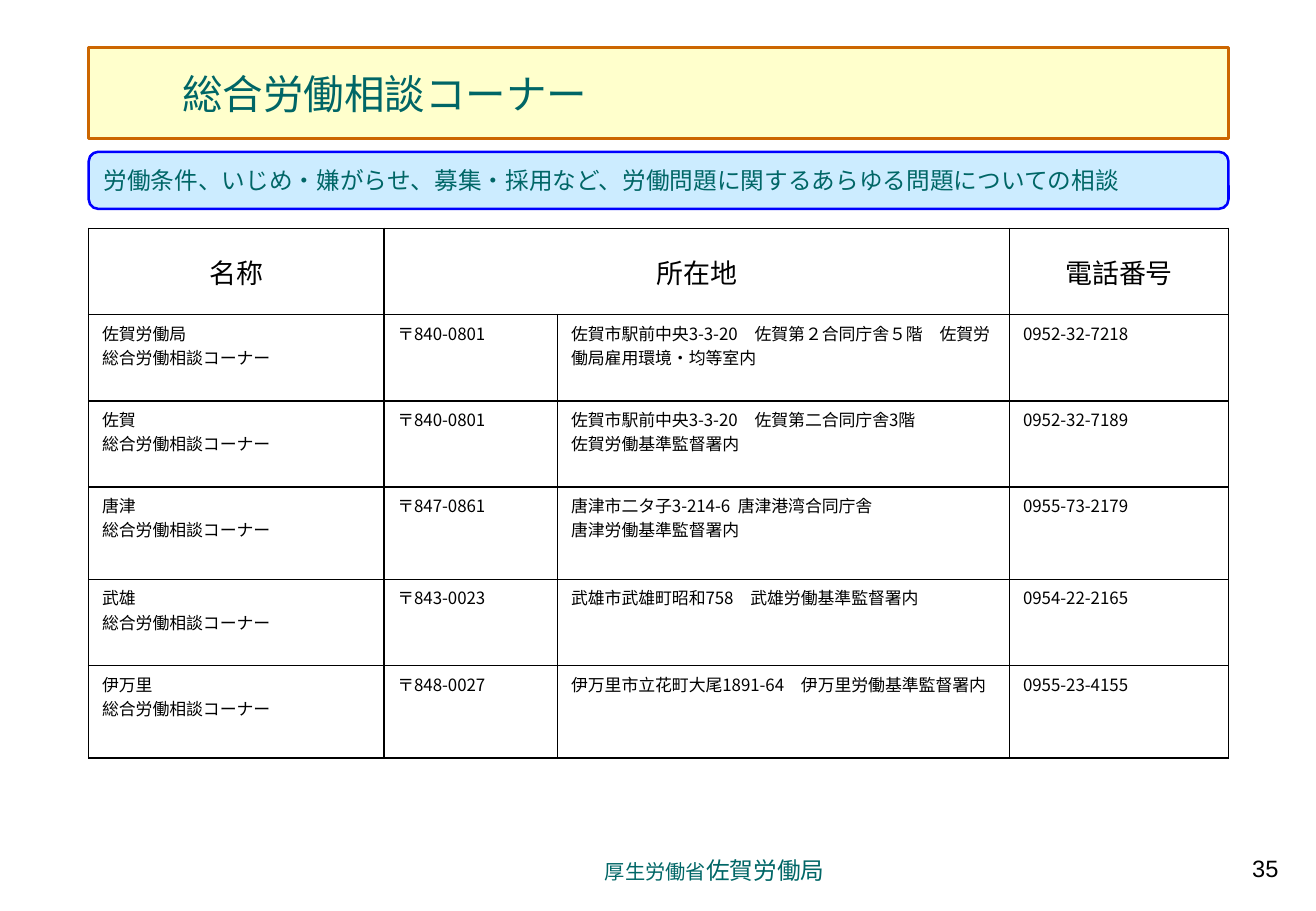
from typing import NamedTuple

from lxml import etree
from pptx import Presentation
from pptx.dml.color import RGBColor
from pptx.enum.shapes import MSO_SHAPE
from pptx.enum.text import MSO_ANCHOR, MSO_AUTO_SIZE, PP_ALIGN
from pptx.oxml.ns import qn
from pptx.util import Inches, Pt

ROUND = MSO_SHAPE.ROUNDED_RECTANGLE
MIDDLE, TOP = MSO_ANCHOR.MIDDLE, MSO_ANCHOR.TOP
LEFT, CENTER, RIGHT = PP_ALIGN.LEFT, PP_ALIGN.CENTER, PP_ALIGN.RIGHT
FIXED = MSO_AUTO_SIZE.NONE

GOTHIC, SERIF, SANS = "Noto Sans CJK JP", "TeX Gyre Pagella", "Arial"
TEAL, BLACK, WHITE = "006666", "000000", "FFFFFF"
EDGE, WIDTH = 0.73, 9.38


class Office(NamedTuple):
    name: str
    post: str
    place: str
    phone: str


class Panel(NamedTuple):
    top: float
    height: float
    fill: str
    line: str
    size: int
    text: str


HEADS = {0: "名称", 1: "所在地", 3: "電話番号"}
DESK = "総合労働相談コーナー"
COLS = [2.43, 1.43, 3.72, 1.8]
ROWS = [0.71, 0.71, 0.71, 0.76, 0.71, 0.76]
OFFICES = [
    Office("佐賀労働局", "〒840-0801",
           "佐賀市駅前中央3-3-20　佐賀第２合同庁舎５階　佐賀労働局雇用環境・均等室内",
           "0952-32-7218"),
    Office("佐賀", "〒840-0801",
           "佐賀市駅前中央3-3-20　佐賀第二合同庁舎3階\n佐賀労働基準監督署内",
           "0952-32-7189"),
    Office("唐津", "〒847-0861",
           "唐津市二タ子3-214-6  唐津港湾合同庁舎\n唐津労働基準監督署内",
           "0955-73-2179"),
    Office("武雄", "〒843-0023", "武雄市武雄町昭和758　武雄労働基準監督署内",
           "0954-22-2165"),
    Office("伊万里", "〒848-0027",
           "伊万里市立花町大尾1891-64　伊万里労働基準監督署内",
           "0955-23-4155"),
]
TITLE = Panel(0.39, 0.75, "FFFFCC", "CC6600", 24, DESK)
TOPIC = Panel(1.25, 0.47, "CCECFF", "0000FF", 14,
              "労働条件、いじめ・嫌がらせ、募集・採用など、"
              "労働問題に関するあらゆる問題についての相談")


def paint(fill, color: str) -> None:
    fill.solid()
    fill.fore_color.rgb = RGBColor.from_string(color)


def style(run, size: int, color: str, face: str = GOTHIC) -> None:
    run.font.size = Pt(size)
    run.font.name = face
    run.font.color.rgb = RGBColor.from_string(color)
    if face != SANS:
        east = etree.SubElement(run.font._element, qn("a:ea"))
        east.set("typeface", GOTHIC)


def write(frame, text: str, size: int, color: str, align=LEFT,
          face: str = GOTHIC) -> None:
    frame.text = text
    for para in frame.paragraphs:
        para.alignment = align
        for run in para.runs:
            style(run, size, color, face)


def dress(shape, panel: Panel) -> None:
    paint(shape.fill, panel.fill)
    paint(shape.line.fill, panel.line)
    shape.line.width = Pt(1.5)
    frame = shape.text_frame
    frame.auto_size = FIXED
    frame.word_wrap = False
    frame.vertical_anchor = MIDDLE
    write(frame, panel.text, panel.size, TEAL)


def border(cell) -> None:
    props = cell._tc.get_or_add_tcPr()
    for side in ("lnL", "lnR", "lnT", "lnB"):
        line = etree.SubElement(props, qn(f"a:{side}"), w=str(Pt(1)))
        solid = etree.SubElement(line, qn("a:solidFill"))
        etree.SubElement(solid, qn("a:srgbClr"), val=BLACK)


def add_title(slide) -> None:
    title = slide.shapes.title
    title.left, title.top = Inches(EDGE), Inches(TITLE.top)
    title.width, title.height = Inches(WIDTH), Inches(TITLE.height)
    # Rounded outline and left indent
    geom = etree.SubElement(title._element.spPr, qn("a:prstGeom"),
                            prst="roundRect")
    etree.SubElement(geom, qn("a:avLst"))
    dress(title, TITLE)
    props = title.text_frame.paragraphs[0]._p.get_or_add_pPr()
    props.set("marL", str(Inches(0.67)))


def add_topic(slide) -> None:
    shape = slide.shapes.add_shape(ROUND, Inches(EDGE), Inches(TOPIC.top),
                                   Inches(WIDTH), Inches(TOPIC.height))
    shape.shadow.inherit = False
    dress(shape, TOPIC)


def add_list(slide) -> None:
    table = slide.shapes.add_table(
        len(ROWS), len(COLS), Inches(EDGE), Inches(1.88),
        Inches(WIDTH), Inches(sum(ROWS))).table
    table.first_row = table.horz_banding = False
    for col, width in zip(table.columns, COLS):
        col.width = Inches(width)
    for row, height in zip(table.rows, ROWS):
        row.height = Inches(height)
    for cell in table.iter_cells():
        border(cell)
        paint(cell.fill, WHITE)
        cell.margin_left = cell.margin_right = Inches(0.11)
        cell.margin_top = cell.margin_bottom = Inches(0.05)
        cell.vertical_anchor = TOP
    # Header row
    table.cell(0, 1).merge(table.cell(0, 2))
    for col, head in HEADS.items():
        cell = table.cell(0, col)
        cell.vertical_anchor = MIDDLE
        write(cell.text_frame, head, 16, BLACK, CENTER)
    # One row per office
    for row, office in enumerate(OFFICES, 1):
        texts = (f"{office.name}\n{DESK}", *office[1:])
        for col, text in enumerate(texts):
            write(table.cell(row, col).text_frame, text, 10, BLACK)


def add_box(slide, left: float, top: float, width: float, height: float):
    box = slide.shapes.add_textbox(Inches(left), Inches(top),
                                   Inches(width), Inches(height))
    box.text_frame.word_wrap = True
    return box.text_frame


def add_foot(slide) -> None:
    para = add_box(slide, 4.88, 7, 2.44, 0.33).paragraphs[0]
    for text, size in (("厚生労働省", 12), ("佐賀労働局", 14)):
        run = para.add_run()
        run.text = text
        style(run, size, TEAL, SERIF)
    page = add_box(slide, 8.49, 6.98, 2.13, 0.35)
    write(page, "35", 14, BLACK, RIGHT, SANS)


def main() -> None:
    deck = Presentation()
    deck.slide_width, deck.slide_height = Inches(10.83), Inches(7.5)
    slide = deck.slides.add_slide(deck.slide_layouts[5])
    paint(slide.background.fill, WHITE)
    add_title(slide)
    add_topic(slide)
    add_list(slide)
    add_foot(slide)
    deck.save("out.pptx")


if __name__ == "__main__":
    main()
